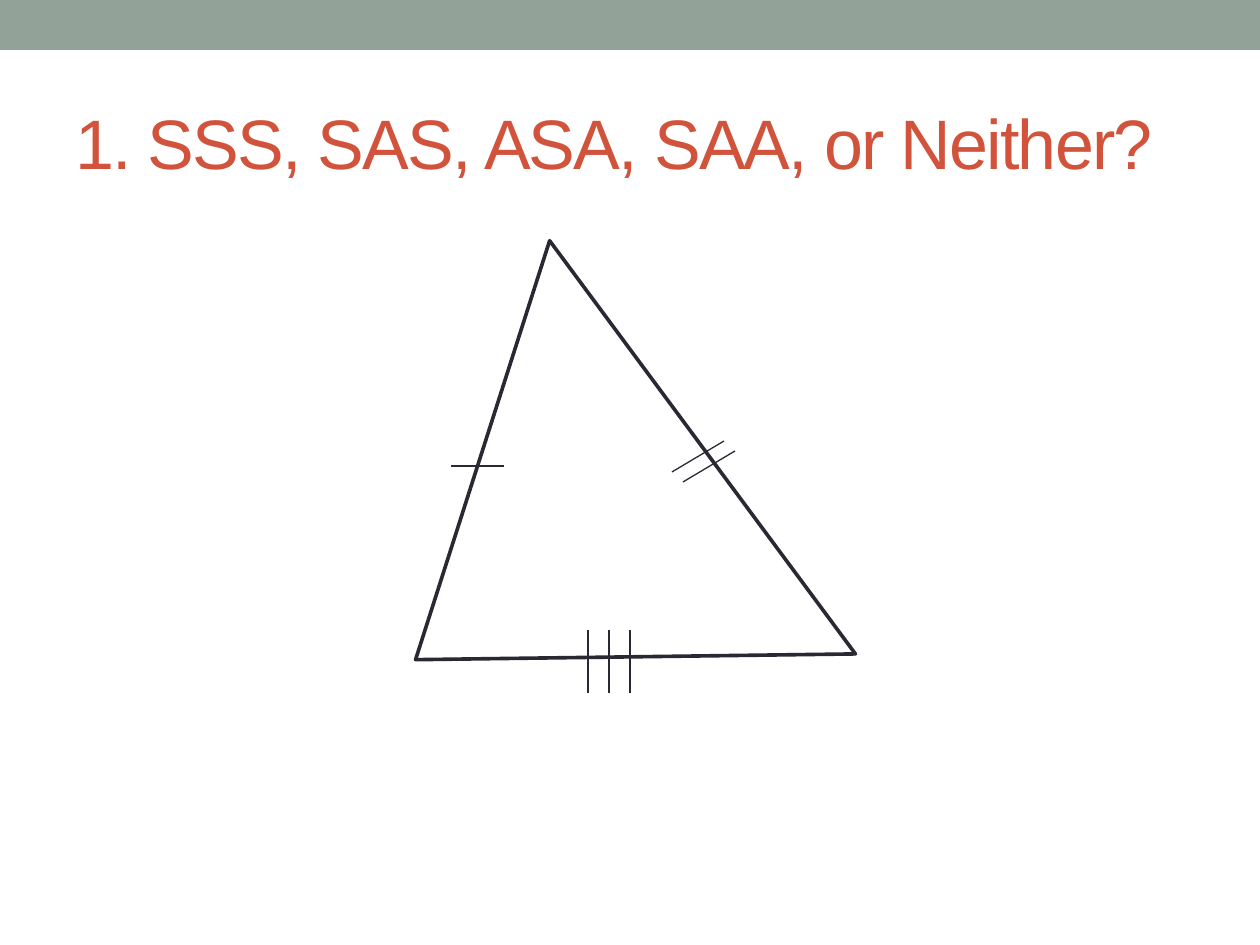
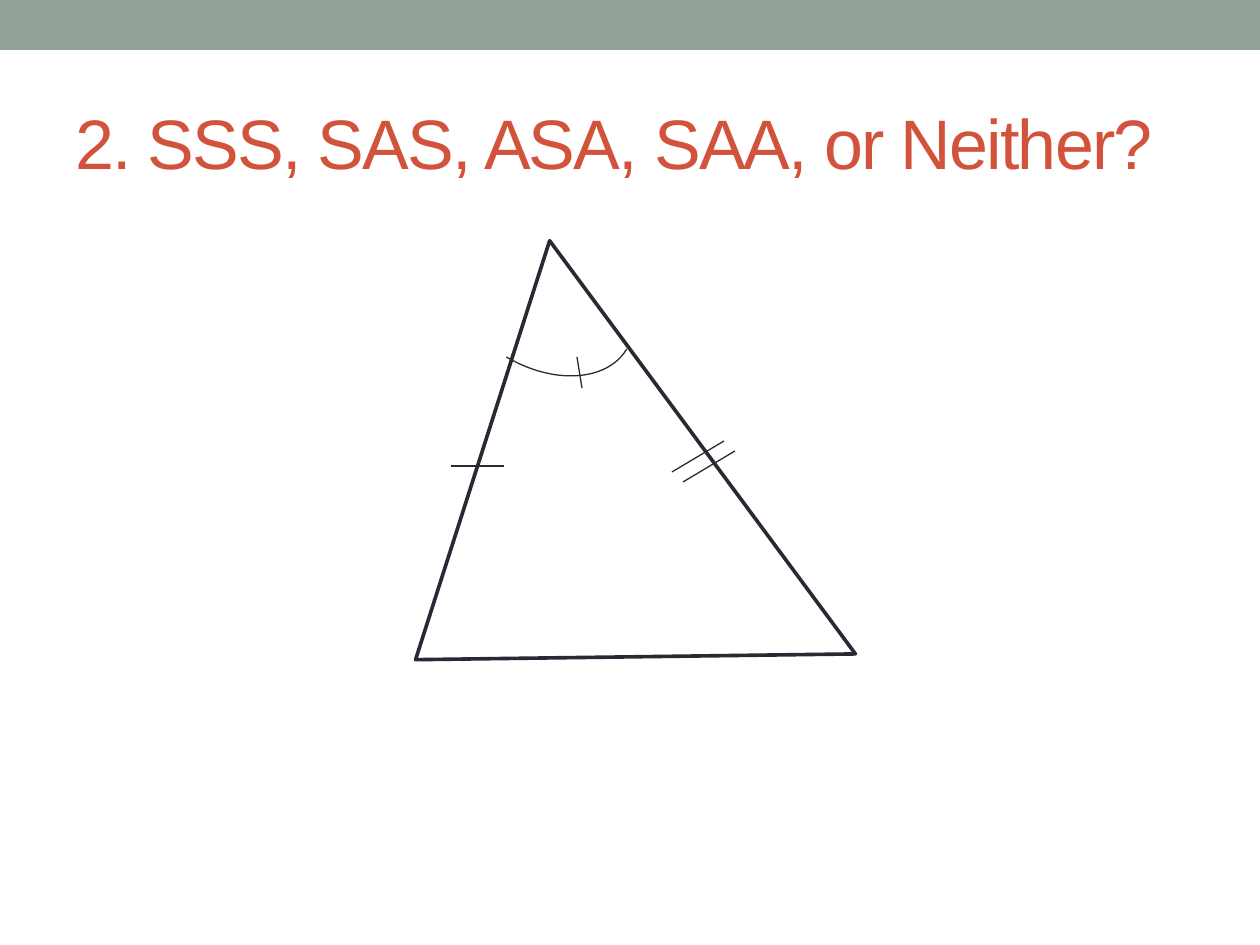
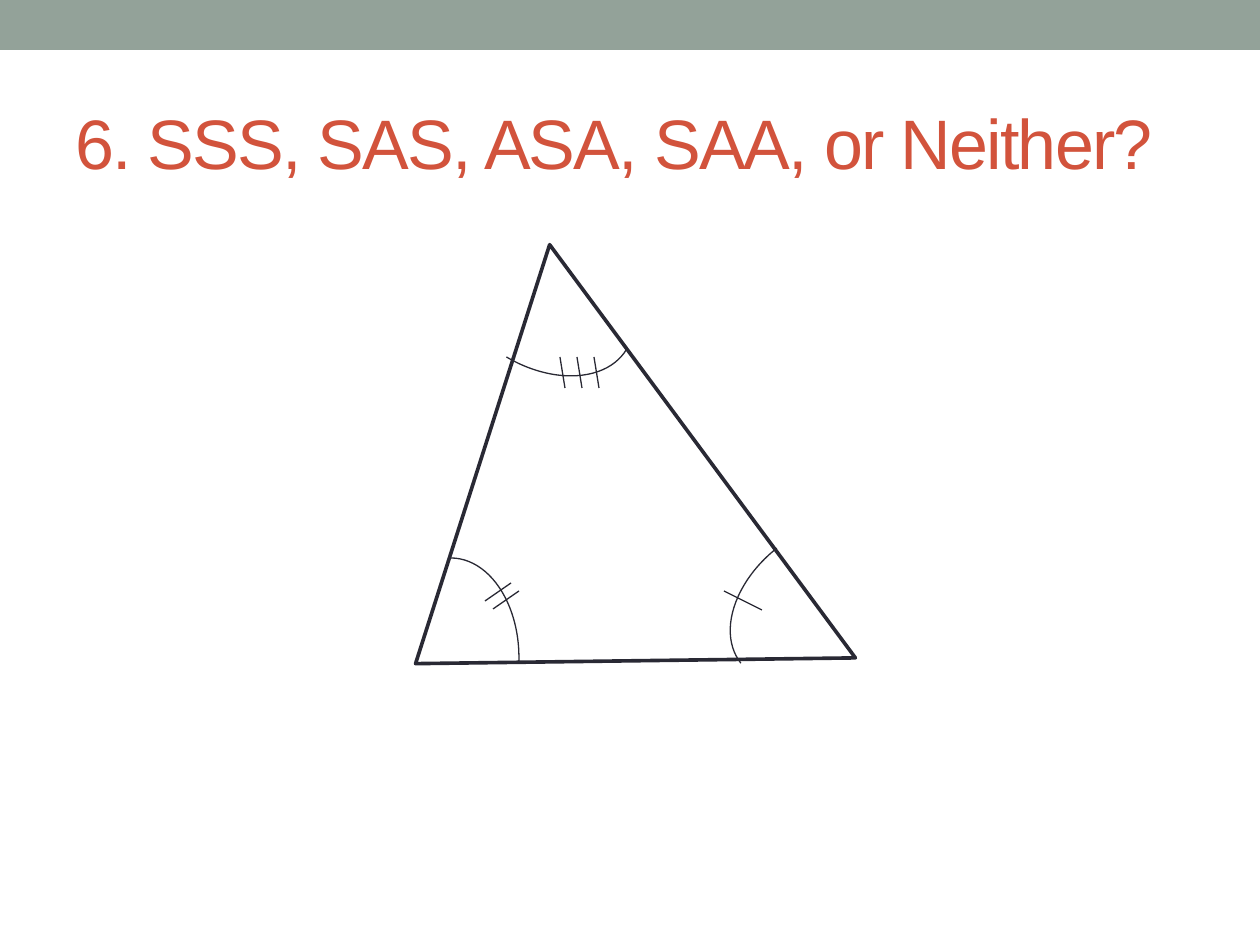
from lxml import etree
from pptx import Presentation
from pptx.dml.color import RGBColor
from pptx.enum.shapes import MSO_CONNECTOR, MSO_SHAPE
from pptx.enum.text import MSO_ANCHOR
from pptx.oxml.ns import qn
from pptx.util import Pt

RECTANGLE = MSO_SHAPE.RECTANGLE
TRIANGLE = MSO_SHAPE.ISOSCELES_TRIANGLE
ARC = MSO_SHAPE.ARC
STRAIGHT = MSO_CONNECTOR.STRAIGHT
MIDDLE = MSO_ANCHOR.MIDDLE

PX = 914400 / 126
COLORS = {"band": "93A299", "title": "D2533C", "ink": "292934", "paper": "FFFFFF"}
FONT = "Arial"
THIN, THICK = 0.75, 2.08

ARC_SIZE = (136, 199)
# Angle marks: left, top, rotation, end adjustment
TOP_ANGLE = (473, 199, 120.6, 0)
RIGHT_ANGLE = (751, 502, 231.7, 0)
LEFT_ANGLE = (383, 558, 0, 1.92)

# Tick groups: start, end, step to the next tick, count
LEFT_SIDE = ((451, 466), (504, 466), (0, 0), 1)
RIGHT_SIDE = ((672, 472), (724, 441), (11, 10), 2)
BASE_SIDE = ((588, 630), (588, 693), (21, 0), 3)
TOP_ANGLE_ONE = ((577, 357), (582, 388), (0, 0), 1)
TOP_ANGLE_THREE = ((560, 357), (565, 388), (17, 0), 3)
LEFT_ANGLE_TWO = ((485, 601), (511, 583), (8, 8), 2)
RIGHT_ANGLE_ONE = ((724, 591), (762, 610), (0, 0), 1)

# Question number, triangle top, angle marks, tick groups
QUESTIONS = [
    (1, 375, [], [LEFT_SIDE, BASE_SIDE, RIGHT_SIDE]),
    (2, 375, [TOP_ANGLE], [LEFT_SIDE, RIGHT_SIDE, TOP_ANGLE_ONE]),
    (6, 379, [RIGHT_ANGLE, LEFT_ANGLE, TOP_ANGLE],
     [RIGHT_ANGLE_ONE, LEFT_ANGLE_TWO, TOP_ANGLE_THREE]),
]


def add_text(slide, text, box, *, size, color, spacing=0, anchor=MIDDLE):
    """Add a wrapped one-paragraph text box; spacing is in points."""
    frame = slide.shapes.add_textbox(*(int(v * PX) for v in box)).text_frame
    frame.word_wrap = True
    frame.vertical_anchor = anchor
    run = frame.paragraphs[0].add_run()
    run.text = text
    run.font.name = FONT
    run.font.size = Pt(size)
    run.font.color.rgb = RGBColor.from_string(color)
    run.font._element.set("spc", str(spacing * 100))


def add_figure(slide, kind, box, *, fill=None, line=None, weight=THIN, rotation=0):
    figure = slide.shapes.add_shape(kind, *(int(v * PX) for v in box))
    figure.shadow.inherit = False
    figure.rotation = rotation
    if fill:
        figure.fill.solid()
        figure.fill.fore_color.rgb = RGBColor.from_string(fill)
    else:
        figure.fill.background()
    if line:
        figure.line.color.rgb = RGBColor.from_string(line)
        figure.line.width = Pt(weight)
    else:
        figure.line.fill.background()
    return figure


prs = Presentation()
prs.slide_width = int(1260 * PX)
prs.slide_height = int(945 * PX)

for number, triangle_top, angles, tick_groups in QUESTIONS:
    slide = prs.slides.add_slide(prs.slide_layouts[6])
    add_figure(slide, RECTANGLE, (0, 0, 1260, 50), fill=COLORS["band"])
    add_text(slide, f"{number}. SSS, SAS, ASA, SAA, or Neither?", (63, 73, 1134, 136),
             size=40, color=COLORS["title"], spacing=-1)
    add_figure(slide, TRIANGLE, (302, triangle_top, 514, 357), fill=COLORS["paper"],
               line=COLORS["ink"], weight=THICK, rotation=233.5)

    for left, top, rotation, end in angles:
        angle = add_figure(slide, ARC, (left, top, *ARC_SIZE),
                           line=COLORS["ink"], rotation=rotation)
        angle.adjustments[1] = end

    for (x1, y1), (x2, y2), (dx, dy), count in tick_groups:
        for i in range(count):
            ends = (x1 + i * dx, y1 + i * dy, x2 + i * dx, y2 + i * dy)
            tick = slide.shapes.add_connector(STRAIGHT, *(int(v * PX) for v in ends))
            tick.line.color.rgb = RGBColor.from_string(COLORS["ink"])
            tick.line.width = Pt(THIN)
            etree.SubElement(tick._element.spPr, qn("a:effectLst"))

prs.save("out.pptx")
